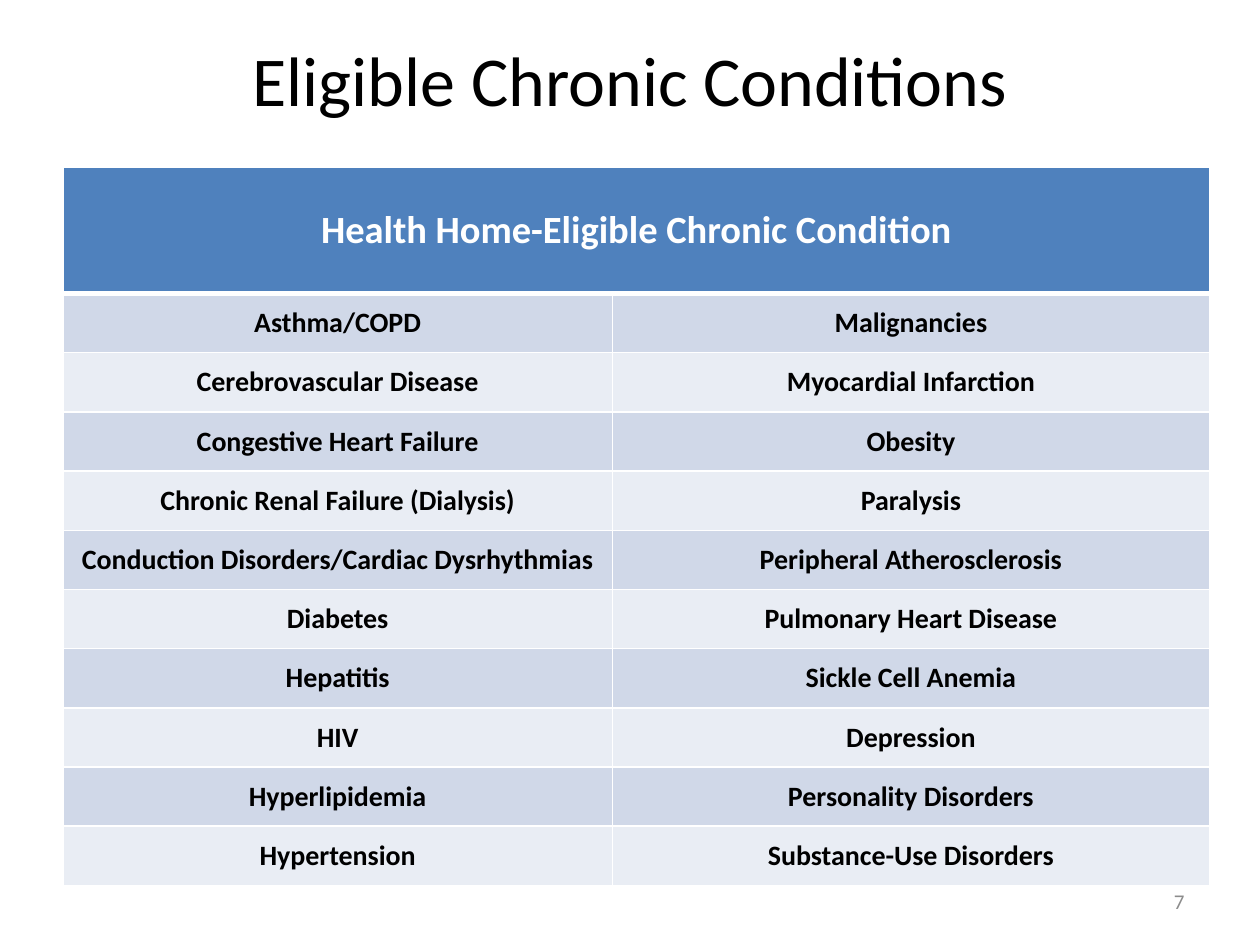
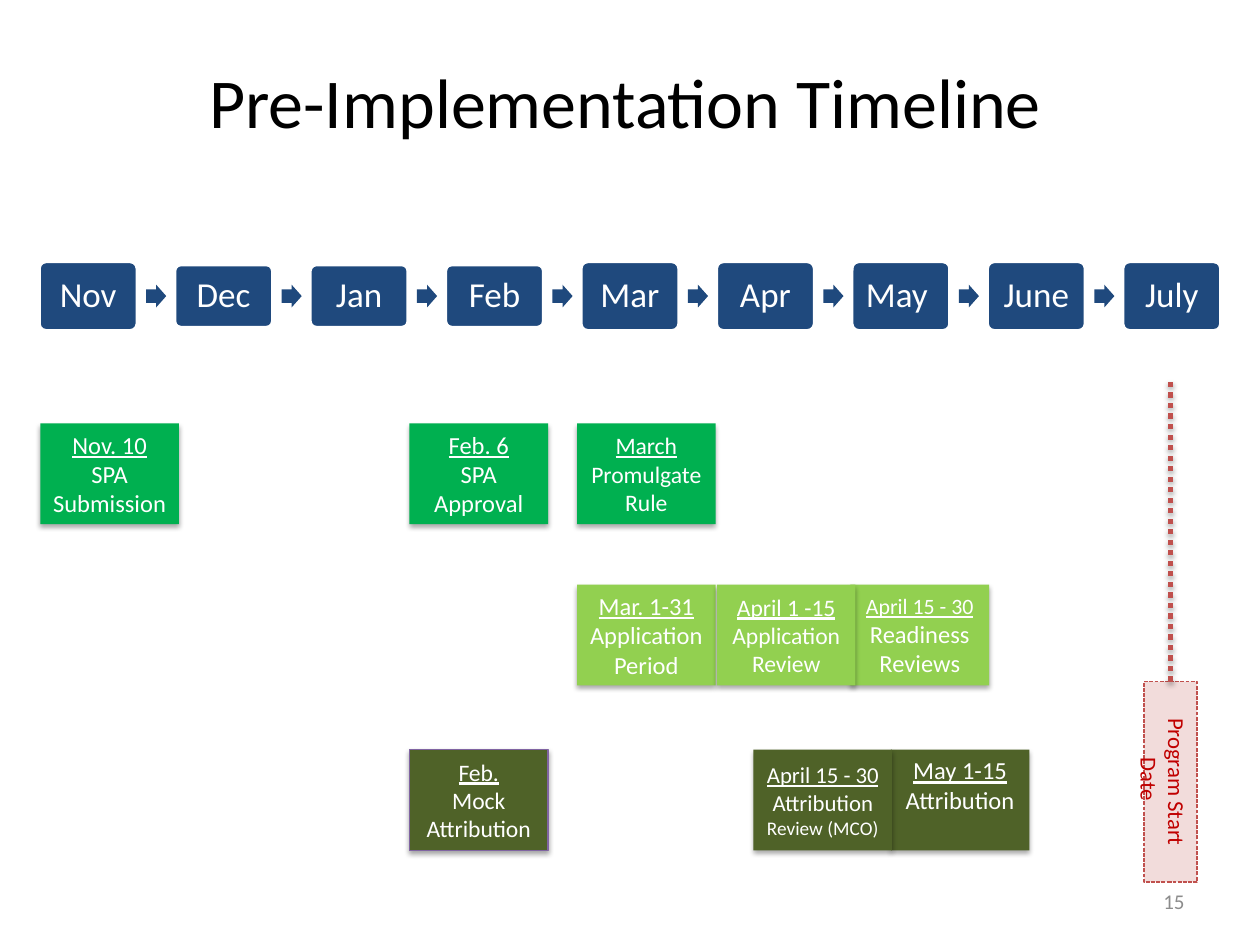
from pptx import Presentation
from pptx.dml.color import RGBColor
from pptx.enum.dml import MSO_LINE
from pptx.enum.shapes import MSO_CONNECTOR, MSO_SHAPE
from pptx.enum.text import MSO_ANCHOR, PP_ALIGN
from pptx.oxml import parse_xml
from pptx.oxml.ns import nsdecls
from pptx.util import Inches, Pt

# Shared colours
WHITE, BLACK, GREY = "FFFFFF", "000000", "8C8C8C"
HEADER_BLUE, BAND_DARK, BAND_LIGHT = "4F81BD", "D0D8E8", "E9EDF4"
NAVY, GREEN, LIME, OLIVE = "1F497D", "00B050", "92D050", "4F6228"
PURPLE, RED, DARK_RED, PINK = "8064A2", "C0504D", "C00000", "F2DCDB"


def color(value):
    return RGBColor.from_string(value)


def write_text(frame, paragraphs, size=14, fill=WHITE, bold=False, align=PP_ALIGN.CENTER,
               anchor=MSO_ANCHOR.MIDDLE, spacing=None):
    """Each paragraph is a string or a list of (text, size, underline) runs."""
    frame.word_wrap = True
    frame.vertical_anchor = anchor
    for index, content in enumerate(paragraphs):
        paragraph = frame.paragraphs[0] if index == 0 else frame.add_paragraph()
        paragraph.alignment = align
        if spacing:
            paragraph.line_spacing = spacing
        runs = [(content, size, False)] if isinstance(content, str) else content
        for text, run_size, underline in runs:
            run = paragraph.add_run()
            run.text = text
            run.font.name = "Calibri"
            run.font.size = Pt(run_size)
            run.font.bold = bold
            run.font.underline = underline
            run.font.color.rgb = color(fill)


def add_shadow(shape, opacity, blur, distance):
    for effects in shape._element.spPr.findall("{*}effectLst"):
        shape._element.spPr.remove(effects)
    shape._element.spPr.append(parse_xml(
        f'<a:effectLst {nsdecls("a")}><a:outerShdw blurRad="{Pt(blur)}" dist="{Pt(distance)}" '
        f'dir="5400000" rotWithShape="0"><a:srgbClr val="{BLACK}">'
        f'<a:alpha val="{opacity * 1000}"/></a:srgbClr></a:outerShdw></a:effectLst>'))


def set_borders(cell, **widths):
    """Draw white borders; widths in points are keyed by side: L, R, T, B."""
    properties = cell._tc.get_or_add_tcPr()
    for position, side in enumerate("LRTB"):
        properties.insert(position, parse_xml(
            f'<a:ln{side} {nsdecls("a")} w="{Pt(widths.get(side, 1))}"><a:solidFill>'
            f'<a:srgbClr val="{WHITE}"/></a:solidFill></a:ln{side}>'))


class Deck:
    def __init__(self):
        self.presentation = Presentation()
        self.presentation.slide_width = Inches(10)
        self.presentation.slide_height = Inches(7.5)
        self.slide = None

    def new_slide(self, title, number, left, top, width):
        self.slide = self.presentation.slides.add_slide(self.presentation.slide_layouts[6])
        self.text(left, top, width, 1.25, title, size=40, fill=BLACK)
        self.text(7.17, 6.95, 2.33, 0.4, number, size=12, fill=GREY, align=PP_ALIGN.RIGHT)

    def text(self, left, top, width, height, content, **style):
        box = self.slide.shapes.add_textbox(
            Inches(left), Inches(top), Inches(width), Inches(height))
        write_text(box.text_frame, [content], **style)

    def shape(self, kind, left, top, width, height, fill, line=None, line_width=0.75):
        shape = self.slide.shapes.add_shape(
            kind, Inches(left), Inches(top), Inches(width), Inches(height))
        shape.shadow.inherit = False
        shape.fill.solid()
        shape.fill.fore_color.rgb = color(fill)
        if line:
            shape.line.color.rgb = color(line)
            shape.line.width = Pt(line_width)
        else:
            shape.line.fill.background()
        return shape

    def month(self, left, height, name):
        middle = 2.35
        box = self.shape(MSO_SHAPE.ROUNDED_RECTANGLE, left, middle - height / 2, 0.78, height,
                         NAVY, WHITE, 2)
        box.adjustments[0] = 0.1
        frame = box.text_frame
        frame.margin_left = frame.margin_right = Inches(0.08)
        frame.margin_top = frame.margin_bottom = Inches(0.08)
        write_text(frame, [name], size=20, spacing=0.9)

    def arrow(self, left):
        arrow = self.shape(MSO_SHAPE.RIGHT_ARROW, left, 2.26, 0.16, 0.18, NAVY)
        arrow.adjustments[0] = 0.6

    def card(self, left, top, fill, date, date_size, body, line=None, space_below=0.05):
        card = self.shape(MSO_SHAPE.RECTANGLE, left, top, 1.1, 0.8, fill, line)
        add_shadow(card, 35, 3.1, 1.8)
        card.text_frame.margin_bottom = Inches(space_below)
        write_text(card.text_frame, [[(date, date_size, True)],
                                     [(text, size, False) for text, size in body]])

    def start_marker(self, label):
        box = self.shape(MSO_SHAPE.RECTANGLE, 9.08, 5.41, 0.42, 1.59, PINK, RED)
        box.line.dash_style = MSO_LINE.SQUARE_DOT
        write_text(box.text_frame, [label], size=13, fill=DARK_RED, anchor=MSO_ANCHOR.TOP)
        box.text_frame._txBody.bodyPr.set("vert", "vert")
        line = self.slide.shapes.add_connector(
            MSO_CONNECTOR.STRAIGHT, Inches(9.29), Inches(5.41), Inches(9.29), Inches(3))
        line.begin_connect(box, 0)
        line.line.color.rgb = color(RED)
        line.line.width = Pt(3)
        line.line.dash_style = MSO_LINE.ROUND_DOT
        add_shadow(line, 38, 3.1, 1.6)

    def cell(self, cell, content, fill, size, **borders):
        cell.fill.solid()
        cell.fill.fore_color.rgb = color(fill)
        cell.margin_left = cell.margin_right = cell.margin_top = cell.margin_bottom = 0
        cell.vertical_anchor = MSO_ANCHOR.MIDDLE
        set_borders(cell, **borders)
        if content:
            write_text(cell.text_frame, [content], size=size, bold=True,
                       fill=WHITE if fill == HEADER_BLUE else BLACK)

    def table(self, heading, rows):
        table = self.slide.shapes.add_table(
            len(rows) + 1, 2, Inches(0.5), Inches(1.33), Inches(9.1), Inches(5.67)).table
        table.horz_banding = False
        for column, width in zip(table.columns, (4.36, 4.74)):
            column.width = Inches(width)
        for index, row in enumerate(table.rows):
            row.height = Inches(0.47 if index else 1)
        table.cell(0, 0).merge(table.cell(0, 1))
        for column, content in enumerate((heading, "")):
            self.cell(table.cell(0, column), content, HEADER_BLUE, 22, B=3)
        for index, names in enumerate(rows, start=1):
            for column, name in enumerate(names):
                self.cell(table.cell(index, column), name,
                          BAND_DARK if index % 2 else BAND_LIGHT, 16, T=3 if index == 1 else 1)


CONDITIONS = [
    ("Asthma/COPD", "Malignancies"),
    ("Cerebrovascular Disease", "Myocardial Infarction"),
    ("Congestive Heart Failure", "Obesity"),
    ("Chronic Renal Failure (Dialysis)", "Paralysis"),
    ("Conduction Disorders/Cardiac Dysrhythmias", "Peripheral Atherosclerosis"),
    ("Diabetes", "Pulmonary Heart Disease"),
    ("Hepatitis", "Sickle Cell Anemia"),
    ("HIV", "Depression"),
    ("Hyperlipidemia", "Personality Disorders"),
    ("Hypertension", "Substance-Use Disorders"),
]
MONTHS = ["Nov", "Dec", "Jan", "Feb", "Mar", "Apr", "May ", "June", "July"]
SHORT_MONTHS = ("Dec", "Jan", "Feb")
RULE_ROW, APPLICATION_ROW, ATTRIBUTION_ROW = 3.36, 4.64, 5.95


def main():
    deck = Deck()

    # Eligible conditions
    deck.new_slide("Eligible Chronic Conditions", "7", 0.5, 0, 9)
    deck.table("Health Home-Eligible Chronic Condition", CONDITIONS)

    # Timeline: months
    deck.new_slide("Pre-Implementation Timeline", "15", 0.25, 0.17, 9.42)
    pitch = (8.91 - 0.31) / (len(MONTHS) - 1)
    for index, name in enumerate(MONTHS):
        left = 0.31 + index * pitch
        deck.month(left, 0.5 if name in SHORT_MONTHS else 0.55, name)
        if index < len(MONTHS) - 1:
            deck.arrow(left + 0.85)
    deck.start_marker("Program Start Date ")

    # Timeline: plan and rule
    deck.card(0.32, RULE_ROW, GREEN, "Nov. 10", 14, [("SPA Submission", 14)])
    deck.card(3.25, RULE_ROW, GREEN, "Feb. 6", 14, [("SPA Approval", 14)])
    deck.card(4.58, RULE_ROW, GREEN, "March", 13.5, [("Promulgate Rule", 13.5)])

    # Timeline: applications, later cards behind earlier ones
    deck.card(6.75, APPLICATION_ROW, LIME, "April 15 - 30", 12.5, [("Readiness Reviews", 14)])
    deck.card(4.58, APPLICATION_ROW, LIME, "Mar. 1-31", 14, [("Application Period", 14)])
    deck.card(5.69, APPLICATION_ROW, LIME, "April 1 -15", 13.5, [("Application Review", 13.5)])

    # Timeline: attribution
    deck.card(7.07, ATTRIBUTION_ROW, OLIVE, "May 1-15", 14, [("Attribution", 14)],
              space_below=0.29)
    deck.card(5.98, ATTRIBUTION_ROW, OLIVE, "April 15 - 30", 13,
              [("Attribution ", 13), ("Review (MCO)", 11)])
    deck.card(3.25, ATTRIBUTION_ROW, OLIVE, "Feb.", 13.5, [("Mock Attribution", 13.5)],
              line=PURPLE)

    deck.presentation.save("out.pptx")


if __name__ == "__main__":
    main()
